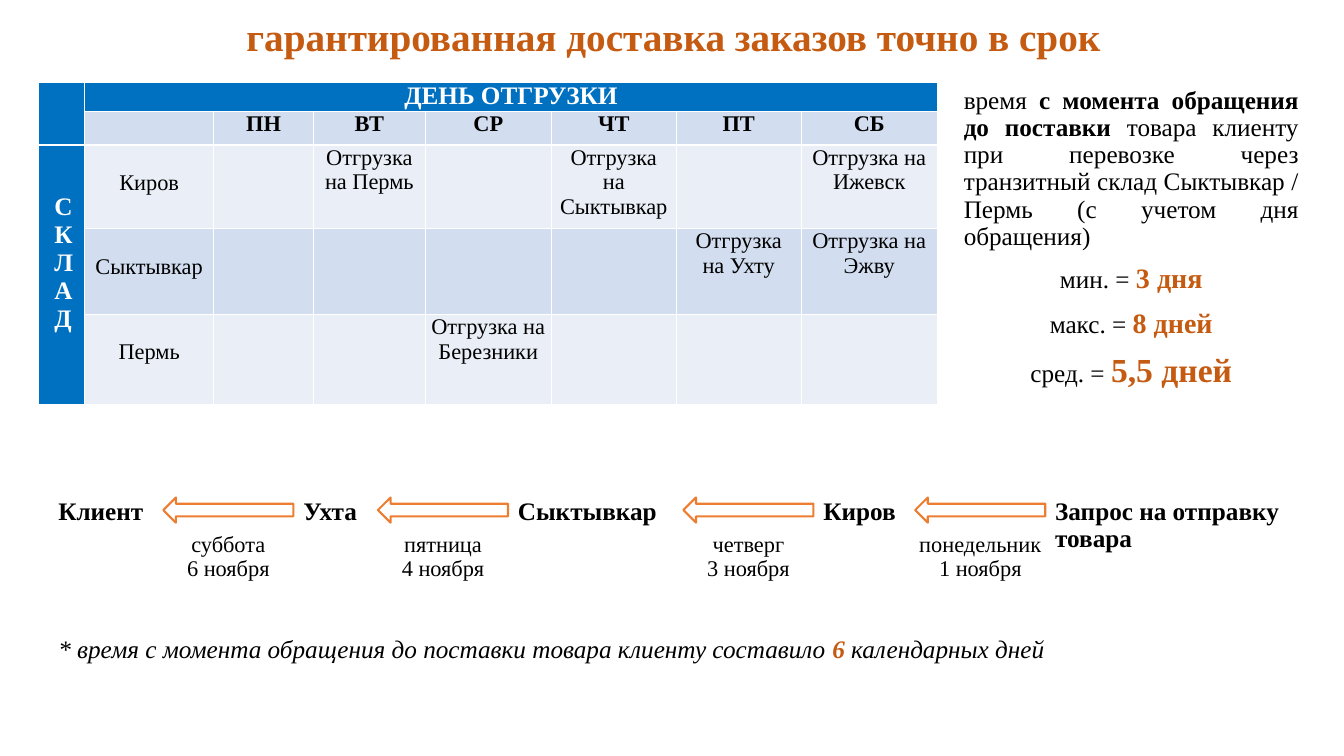
from itertools import accumulate

from pptx import Presentation
from pptx.dml.color import RGBColor
from pptx.enum.shapes import MSO_SHAPE as Shape
from pptx.enum.text import MSO_ANCHOR as Anchor, MSO_AUTO_SIZE as Fit, PP_ALIGN as Align
from pptx.util import Inches, Pt

FONT = "Times New Roman"
BLACK, WHITE, RUST = "000000", "FFFFFF", "C55A11"
BLUE, PALE, LIGHT, ORANGE = "0070C0", "EAEFF7", "D2DEEF", "ED7D31"

DAYS = ["ПН", "ВТ", "СР", "ЧТ", "ПТ", "СБ"]
PLAN = {
    "Киров": {"ВТ": "Отгрузка на Пермь", "ЧТ": "Отгрузка на Сыктывкар",
              "СБ": "Отгрузка на Ижевск"},
    "Сыктывкар": {"ПТ": "Отгрузка на Ухту", "СБ": "Отгрузка на Эжву"},
    "Пермь": {"СР": "Отгрузка на Березники"},
}
COLS = [46, 128, 99, 111, 125, 124, 124, 135]
ROWS = [29, 33, 83, 85, 89]

STOPS = [("Клиент", 114), ("Ухта", 84), ("Сыктывкар", 174), ("Киров", 101),
         ("Запрос на отправку товара", 247)]
LEGS = [("суббота", "6 ноября"), ("пятница", "4 ноября"),
        ("четверг", "3 ноября"), ("понедельник", "1 ноября")]
ARROW = 129

TERMS = [("мин. = ", "3 дня", 20), ("макс. = ", "8 дней", 20),
         ("сред. = ", "5,5 дней", 24)]


def color(code):
    return RGBColor.from_string(code)


def part(box, left, top, width, height):
    """Box inside another one, given as shares of its size."""
    x, y, w, h = box
    return (int(x + w * left), int(y + h * top), int(w * width), int(h * height))


def style(para, size, code=BLACK, bold=False, align=Align.LEFT, space=0.9):
    para.alignment = align
    para.line_spacing = space
    font = para.font
    font.name, font.size, font.bold = FONT, Pt(size), bold
    font.color.rgb = color(code)


def accent(para, text, size=None):
    run = para.add_run()
    run.text = text
    run.font.bold = True
    run.font.color.rgb = color(RUST)
    if size:
        run.font.size = Pt(size)


def text_box(slide, box, lines=(), anchor=Anchor.TOP, **look):
    frame = slide.shapes.add_textbox(*box).text_frame
    frame.word_wrap = True
    frame.vertical_anchor = anchor
    frame.text = "\n".join(lines)
    for para in frame.paragraphs:
        style(para, **look)
    return frame


def add_title(slide, box):
    title = slide.shapes.title
    title.left, title.top, title.width, title.height = box
    frame = title.text_frame
    frame.text = "гарантированная доставка заказов точно в срок"
    frame.auto_size, frame.vertical_anchor = Fit.NONE, Anchor.MIDDLE
    style(frame.paragraphs[0], 28, RUST, True, Align.CENTER)


def fill_cell(cell, text, back, size=16, code=BLACK, bold=False,
              align=Align.CENTER, left=0.06, top=0):
    cell.fill.solid()
    cell.fill.fore_color.rgb = color(back)
    cell.margin_left, cell.margin_right = Inches(left), Inches(0.06)
    cell.margin_top, cell.margin_bottom = Inches(top), 0
    cell.text = text
    for para in cell.text_frame.paragraphs:
        style(para, size, code, bold, align, 1)


def add_plan(slide, box):
    table = slide.shapes.add_table(len(ROWS), len(COLS), *box).table
    table.horz_banding = False
    for col, share in zip(table.columns, COLS):
        col.width = int(box[2] * share / sum(COLS))
    for row, share in zip(table.rows, ROWS):
        row.height = int(box[3] * share / sum(ROWS))

    for col in range(len(COLS)):
        fill_cell(table.cell(0, col), "", BLUE)
    for row in range(1, len(ROWS)):
        fill_cell(table.cell(row, 0), "", BLUE)
    table.cell(0, 0).merge(table.cell(1, 0))
    table.cell(0, 1).merge(table.cell(0, len(COLS) - 1))
    table.cell(2, 0).merge(table.cell(len(ROWS) - 1, 0))
    fill_cell(table.cell(0, 1), "ДЕНЬ ОТГРУЗКИ", BLUE, 18, WHITE, True)
    fill_cell(table.cell(2, 0), "\n".join("СКЛАД"), BLUE, 18, WHITE, True,
              Align.LEFT, left=0.16, top=0.48)

    for col, day in enumerate([""] + DAYS, 1):
        fill_cell(table.cell(1, col), day, LIGHT, bold=True)
    for row, (town, trips) in enumerate(PLAN.items(), 2):
        back = LIGHT if row % 2 else PALE
        fill_cell(table.cell(row, 1), town, back, top=0.25)
        for col, day in enumerate(DAYS, 2):
            fill_cell(table.cell(row, col), trips.get(day, ""), back)


def add_terms(slide, box):
    frame = text_box(slide, box, [""], size=18, align=Align.JUSTIFY)
    intro = frame.paragraphs[0]
    intro.add_run().text = "время "
    strong = intro.add_run()
    strong.text = "с момента обращения до поставки"
    strong.font.bold = True
    intro.add_run().text = (" товара клиенту при перевозке через транзитный склад "
                            "Сыктывкар / Пермь (с учетом дня обращения)")
    for label, value, size in TERMS:
        para = frame.add_paragraph()
        style(para, 18, align=Align.CENTER)
        para.add_run().text = label
        accent(para, value, size)
    for para in frame.paragraphs:
        para.space_before = Pt(10)


def add_route(slide, box):
    """Stops in a row, with an arrow and a date in each gap."""
    widths = [width for _, width in STOPS]
    total = sum(widths) + ARROW * len(LEGS)
    starts = accumulate([0] + [width + ARROW for width in widths[:-1]])
    for index, ((name, width), start) in enumerate(zip(STOPS, starts)):
        last = index == len(LEGS)
        spot = part(box, start / total, 0, width / total, 0.72 if last else 0.45)
        text_box(slide, spot, [name], Anchor.BOTTOM, size=18, bold=True)
        if last:
            break
        gap = start + width
        arrow = slide.shapes.add_shape(
            Shape.LEFT_ARROW, *part(box, gap / total, 0.115, ARROW / total, 0.25))
        arrow.shadow.inherit = False
        arrow.fill.background()
        arrow.line.color.rgb = color(ORANGE)
        arrow.line.width = Pt(1.5)
        spot = part(box, (gap - 7) / total, 0.45, (ARROW + 14) / total, 0.55)
        text_box(slide, spot, LEGS[index], Anchor.BOTTOM, size=16, align=Align.CENTER)


def add_note(slide, box):
    para = text_box(slide, box, [""], size=18).paragraphs[0]
    para.font.italic = True
    para.add_run().text = "* время с момента обращения до поставки товара клиенту составило "
    accent(para, "6")
    para.add_run().text = " календарных дней"


def main():
    deck = Presentation()
    deck.slide_width, deck.slide_height = Inches(13.33), Inches(7.5)
    page = (0, 0, deck.slide_width, deck.slide_height)
    slide = deck.slides.add_slide(deck.slide_layouts[5])
    add_title(slide, part(page, 0.0285, 0.024, 0.945, 0.055))
    add_plan(slide, part(page, 0.0285, 0.109, 0.669, 0.4265))
    add_terms(slide, part(page, 0.7097, 0.109, 0.264, 0.456))
    add_route(slide, part(page, 0.036, 0.6427, 0.927, 0.1333))
    add_note(slide, part(page, 0.036, 0.836, 0.785, 0.096))
    deck.save("out.pptx")


if __name__ == "__main__":
    main()
